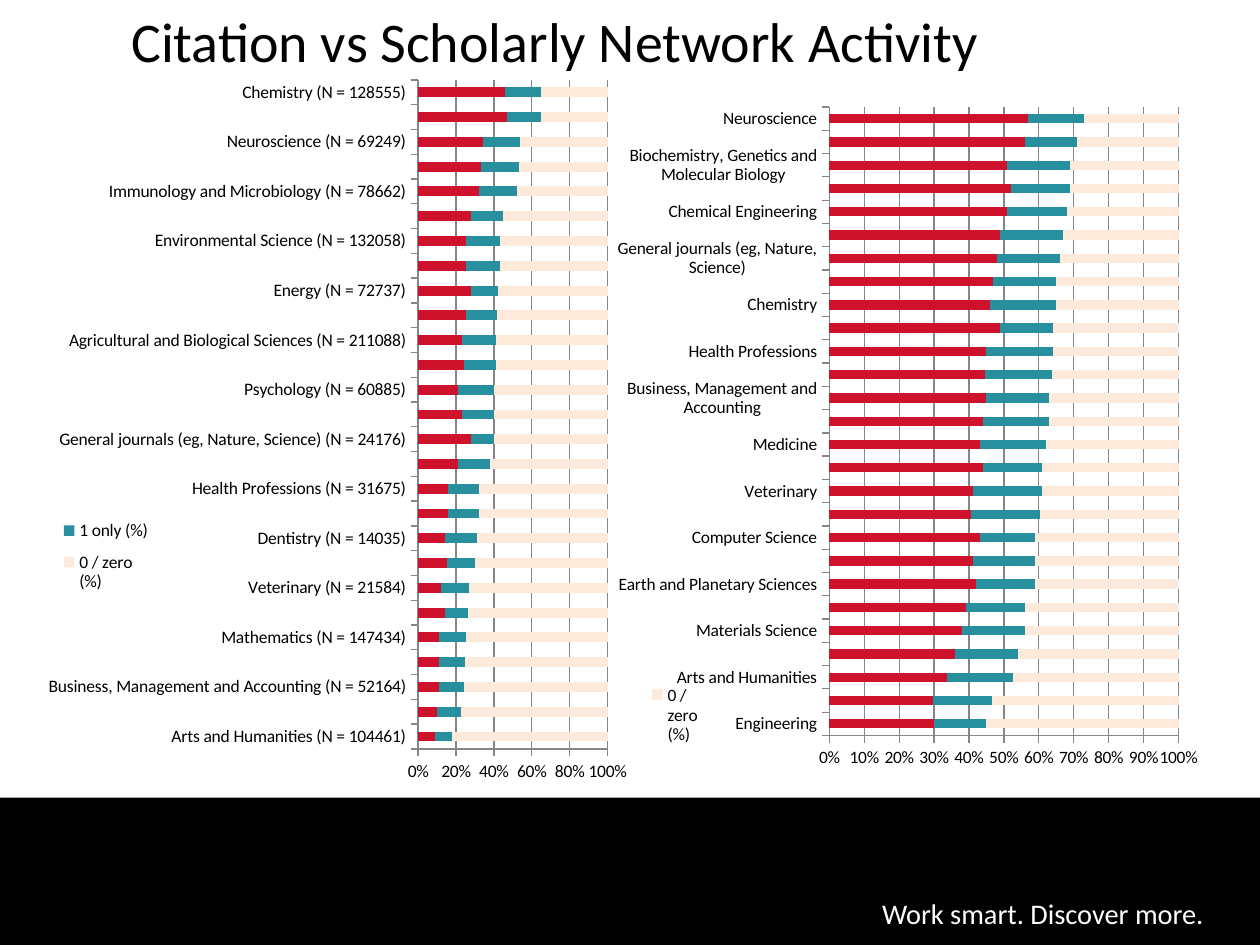
from lxml.etree import SubElement
from pptx import Presentation
from pptx.chart.data import CategoryChartData
from pptx.dml.color import RGBColor
from pptx.enum.chart import XL_CHART_TYPE, XL_LEGEND_POSITION, XL_TICK_MARK
from pptx.enum.shapes import MSO_SHAPE
from pptx.enum.text import MSO_ANCHOR, PP_ALIGN
from pptx.oxml import parse_xml
from pptx.oxml.ns import nsdecls, qn
from pptx.util import Cm, Pt

FONT = "Calibri"
SERIES = (("2 or more (%)", "CF122B"), ("1 only (%)", "278F9D"), ("0 / zero (%)", "FDEADA"))

CITATIONS = [
    ("Arts and Humanities (N = 104461)", 9, 9, 82),
    ("Social Sciences (N = 189083)", 10, 13, 78),
    ("Business, Management and Accounting (N = 52164)", 11, 13, 76),
    ("Economics, Econometrics and Finance (N = 40247)", 11, 14, 76),
    ("Mathematics (N = 147434)", 11, 14, 75),
    ("Engineering (N = 438717)", 14, 12, 73),
    ("Veterinary (N = 21584)", 12, 15, 73),
    ("Nursing (N = 48383)", 15, 15, 70),
    ("Dentistry (N = 14035)", 14, 17, 69),
    ("Decision Sciences (N = 21545)", 16, 16, 68),
    ("Health Professions (N = 31675)", 16, 16, 68),
    ("Computer Science (N = 44086)", 21, 17, 62),
    ("General journals (eg, Nature, Science) (N = 24176)", 28, 12, 60),
    ("Medicine (N = 779828)", 23, 17, 60),
    ("Psychology (N = 60885)", 21, 19, 60),
    ("Earth and Planetary Sciences (N = 104651)", 24, 17, 59),
    ("Agricultural and Biological Sciences (N = 211088)", 23, 18, 59),
    ("Pharmacology, Toxicology and Pharmaceutics (N = 92257)", 25, 16, 58),
    ("Energy (N = 72737)", 28, 14, 58),
    ("Physics and Astronomy (N = 278455)", 25, 18, 57),
    ("Environmental Science (N = 132058)", 25, 18, 57),
    ("Materials Science (N = 226507)", 28, 17, 55),
    ("Immunology and Microbiology (N = 78662)", 32, 20, 48),
    ("Biochemistry, Genetics and Molecular Biology (N = 334864)", 33, 20, 47),
    ("Neuroscience (N = 69249)", 34, 20, 46),
    ("Chemical Engineering (N = 54126)", 47, 18, 35),
    ("Chemistry (N = 128555)", 46, 19, 35),
]

NETWORK = [
    ("Engineering", 30, 15, 55),
    ("Mathematics", 30, 17, 54),
    ("Arts and Humanities", 34, 19, 48),
    ("Physics and Astronomy", 36, 18, 46),
    ("Materials Science", 38, 18, 44),
    ("Energy", 39, 17, 44),
    ("Earth and Planetary Sciences", 42, 17, 41),
    ("Social Sciences", 41, 18, 41),
    ("Computer Science", 43, 16, 41),
    ("Nursing", 41, 20, 40),
    ("Veterinary", 41, 20, 39),
    ("Decision Sciences", 44, 17, 39),
    ("Medicine", 43, 19, 38),
    ("Pharmacology, Toxicology and Pharmaceutics", 44, 19, 37),
    ("Business, Management and Accounting", 45, 18, 37),
    ("Economics, Econometrics and Finance", 44, 19, 36),
    ("Health Professions", 45, 19, 36),
    ("Dentistry", 49, 15, 36),
    ("Chemistry", 46, 19, 35),
    ("Environmental Science", 47, 18, 35),
    ("General journals (eg, Nature, Science)", 48, 18, 34),
    ("Agricultural and Biological Sciences", 49, 18, 33),
    ("Chemical Engineering", 51, 17, 32),
    ("Immunology and Microbiology", 52, 17, 31),
    ("Biochemistry, Genetics and Molecular Biology", 51, 18, 31),
    ("Psychology", 56, 15, 29),
    ("Neuroscience", 57, 16, 27),
]


def rgb(color):
    """Turn a hex string into a colour."""
    return RGBColor.from_string(color)


def set_font(font, size, color):
    """Apply the slide's typeface with a size and colour."""
    font.name, font.size = FONT, Pt(size)
    font.color.rgb = rgb(color)


def add_title(s, text):
    """Fill and place the title placeholder."""
    sp = s.shapes.title
    sp.left, sp.top, sp.width, sp.height = Cm(2.39), Cm(-0.15), Cm(19.69), Cm(1.9)
    tf = sp.text_frame
    tf.text = text
    tf.vertical_anchor = MSO_ANCHOR.MIDDLE
    p = tf.paragraphs[0]
    p.alignment = PP_ALIGN.LEFT
    set_font(p.font, 32, "000000")


def add_footer(s, text):
    """Draw the black band and its raised tagline."""
    sp = s.shapes.add_shape(MSO_SHAPE.RECTANGLE, 0, Cm(16.08), Cm(25.4), Cm(2.97))
    sp.shadow.inherit = False
    sp.fill.solid()
    sp.fill.fore_color.rgb = rgb("000000")
    sp.line.fill.background()
    tf = s.shapes.add_textbox(Cm(16.51), Cm(17.83), Cm(8), Cm(1.07)).text_frame
    tf.word_wrap = False
    p = tf.paragraphs[0]
    p.alignment = PP_ALIGN.RIGHT
    r = p.add_run()
    r.text = text
    set_font(r.font, 28, "FFFFFF")
    r.font._element.set("baseline", "30000")


def make_layout(box, inner=False):
    """Build a manual layout from fractions of the chart."""
    layout = parse_xml(f"<c:layout {nsdecls('c')}><c:manualLayout/></c:layout>")
    target = [("layoutTarget", "inner")] if inner else []
    modes = [("xMode", "edge"), ("yMode", "edge")]
    for tag, val in target + modes + list(zip("xywh", box)):
        SubElement(layout[0], qn(f"c:{tag}")).set("val", str(val))
    return layout


def place_plot(chart, box):
    """Fix the inner plot area."""
    area = chart._chartSpace.chart.plotArea
    for old in area.findall(qn("c:layout")):
        area.remove(old)
    area.insert(0, make_layout(box, inner=True))


def add_legend(chart, box, hidden):
    """Place the legend and leave out the hidden entries."""
    chart.has_legend = True
    legend = chart.legend
    legend.position = XL_LEGEND_POSITION.RIGHT
    legend.include_in_layout = False
    el = legend._element
    for old in el.findall(qn("c:layout")):
        el.remove(old)
    overlay = el.find(qn("c:overlay"))
    for idx in hidden:
        overlay.addprevious(parse_xml(
            f'<c:legendEntry {nsdecls("c")}><c:idx val="{idx}"/><c:delete val="1"/></c:legendEntry>'))
    overlay.addprevious(make_layout(box))


def format_axes(chart, unit):
    """Style both axes and label every second category."""
    cat, val = chart.category_axis, chart.value_axis
    for axis in (cat, val):
        axis.major_tick_mark = XL_TICK_MARK.OUTSIDE
        axis.minor_tick_mark = XL_TICK_MARK.NONE
        axis.format.line.color.rgb = rgb("868686")
    skip = parse_xml(f'<c:tickLblSkip {nsdecls("c")} val="2"/>')
    cat._element.find(qn("c:noMultiLvlLbl")).addprevious(skip)
    val.minimum_scale, val.maximum_scale, val.major_unit = 0, 1, unit
    val.has_major_gridlines = True
    val.major_gridlines.format.line.color.rgb = rgb("868686")
    val.tick_labels.number_format = "0%"
    val.tick_labels.number_format_is_linked = False


def add_bars(s, rows, place, plot_box, legend_box, hidden, unit):
    """Add one 100% stacked bar chart."""
    names, *columns = zip(*rows)
    data = CategoryChartData()
    data.categories = names
    for (name, _), values in zip(SERIES, columns):
        data.add_series(name, values)
    place = [Cm(v) for v in place]
    chart = s.shapes.add_chart(XL_CHART_TYPE.BAR_STACKED_100, *place, data).chart
    chart.has_title = False
    set_font(chart.font, 10, "000000")
    plot = chart.plots[0]
    plot.gap_width, plot.overlap, plot.vary_by_categories = 150, 100, False
    for series, (_, color) in zip(plot.series, SERIES):
        series.format.fill.solid()
        series.format.fill.fore_color.rgb = rgb(color)
    format_axes(chart, unit)
    place_plot(chart, plot_box)
    add_legend(chart, legend_box, hidden)


def main():
    """Build the slide."""
    prs = Presentation()
    prs.slide_width, prs.slide_height = Cm(25.4), Cm(19.05)
    s = prs.slides.add_slide(prs.slide_layouts[5])
    add_footer(s, "Work smart. Discover more.")
    add_title(s, "Citation vs Scholarly Network Activity")
    add_bars(s, CITATIONS, (0.79, 1.32, 14.15, 14.66),
             (0.54, 0.02, 0.27, 0.92), (0.03, 0.61, 0.13, 0.13), [2], 0.2)
    add_bars(s, NETWORK, (12.45, 1.75, 13.61, 13.72),
             (0.31, 0.03, 0.52, 0.93), (0.03, 0.88, 0.1, 0.1), [1, 2], 0.1)
    prs.save("out.pptx")


if __name__ == "__main__":
    main()
